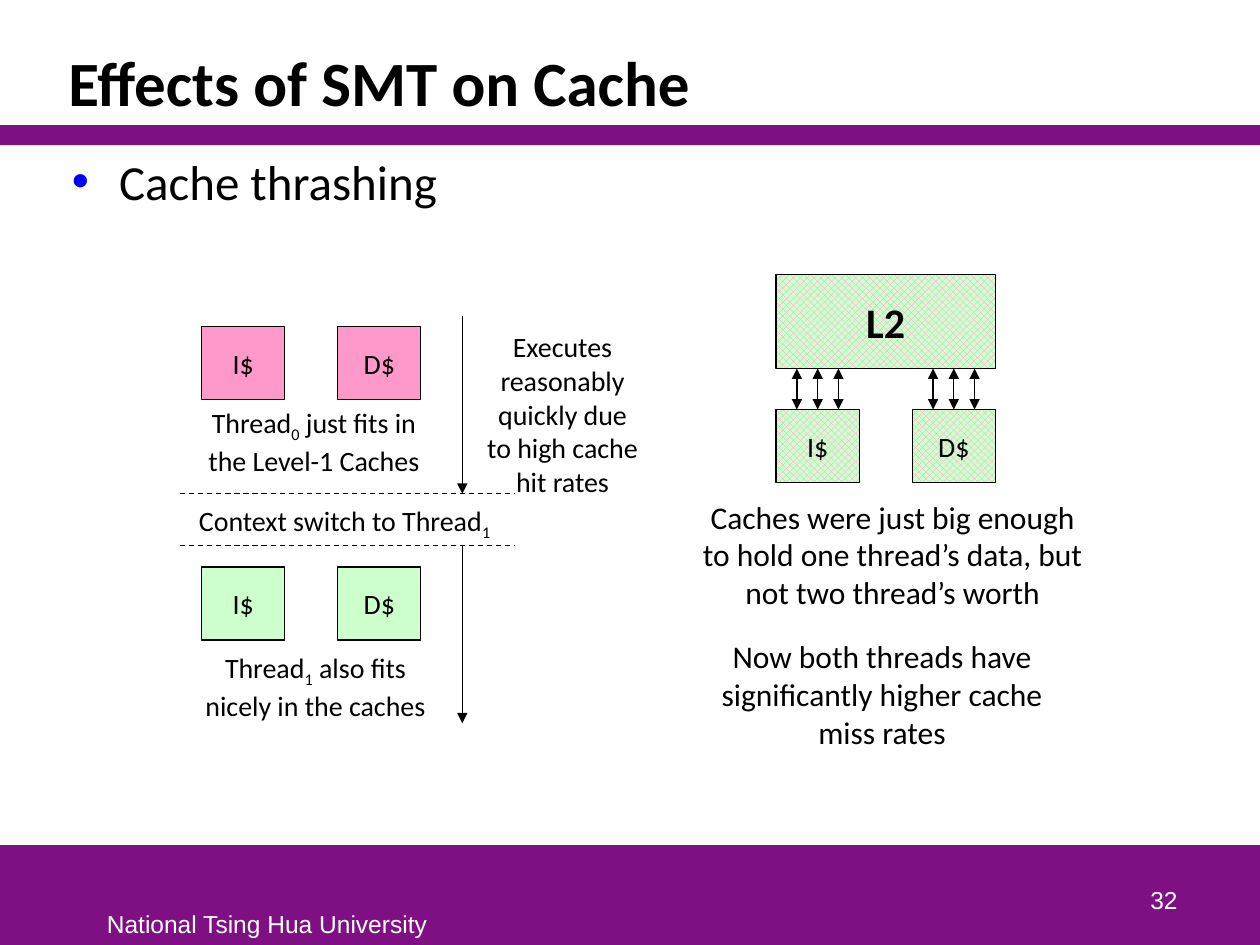
from lxml import etree
from pptx import Presentation
from pptx.dml.color import RGBColor
from pptx.enum.dml import MSO_LINE, MSO_PATTERN
from pptx.enum.shapes import MSO_CONNECTOR, MSO_SHAPE
from pptx.enum.text import MSO_ANCHOR, MSO_AUTO_SIZE, PP_ALIGN
from pptx.oxml.ns import qn
from pptx.util import Pt

RECTANGLE = MSO_SHAPE.RECTANGLE
STRAIGHT = MSO_CONNECTOR.STRAIGHT
DASH = MSO_LINE.DASH
CHECKER = MSO_PATTERN.LARGE_CHECKER_BOARD
TOP, MIDDLE, BOTTOM = MSO_ANCHOR.TOP, MSO_ANCHOR.MIDDLE, MSO_ANCHOR.BOTTOM
LEFT, CENTER, RIGHT = PP_ALIGN.LEFT, PP_ALIGN.CENTER, PP_ALIGN.RIGHT
FIT_SHAPE = MSO_AUTO_SIZE.SHAPE_TO_FIT_TEXT

PURPLE = RGBColor(0x7F, 0x10, 0x84)
PINK = RGBColor(0xFF, 0x99, 0xCC)
GREEN = RGBColor(0xCC, 0xFF, 0xCC)
BLACK = RGBColor(0, 0, 0)
WHITE = RGBColor(0xFF, 0xFF, 0xFF)
BULLET_BLUE = "0000FF"

LABEL = {"name": "Calibri", "size": Pt(16)}
REMARK = {"name": "Calibri", "size": Pt(18)}
HEADING = {"name": "Calibri", "size": Pt(36), "bold": True}
BODY = {"name": "Calibri", "size": Pt(28)}
L2_FONT = {"name": "Calibri", "size": Pt(24), "bold": True}
FOOTER = {"name": "Arial", "size": Pt(14)}

CACHE_W, CACHE_H = 47.5, 41.8
CACHE_PITCH = 77.8
L1_LEFT, SHARED_LEFT = 115.2, 443.5
L2_TOP, L2_H = 156.9, 53.7
SHARED_TOP = 234
TIME_X = 264.2
SWITCH_START, SWITCH_END = 282.2, 311.8
RUN_LENGTH = 101.5


def write(shape, lines, font, color=BLACK, align=CENTER, anchor=TOP):
    """Write one paragraph per line; text between underscores is subscript."""
    frame = shape.text_frame
    frame.vertical_anchor = anchor
    for index, line in enumerate(lines):
        paragraph = frame.paragraphs[0] if index == 0 else frame.add_paragraph()
        paragraph.alignment = align
        for part, text in enumerate(line.split("_")):
            if not text:
                continue
            run = paragraph.add_run()
            run.text = text
            for key, value in font.items():
                setattr(run.font, key, value)
            run.font.color.rgb = color
            if part % 2:
                run._r.get_or_add_rPr().set("baseline", "-25000")
    return frame


def add_text(slide, box, lines, font, wrap=False, **style):
    shape = slide.shapes.add_textbox(*map(Pt, box))
    frame = write(shape, lines, font, **style)
    frame.word_wrap = wrap
    if not wrap:
        frame.auto_size = FIT_SHAPE
    return frame


def add_band(slide, top, height):
    band = slide.shapes.add_shape(RECTANGLE, 0, Pt(top), Pt(720), Pt(height))
    band.shadow.inherit = False
    band.fill.solid()
    band.fill.fore_color.rgb = PURPLE
    band.line.fill.background()


def add_cache(slide, box, name, color=None, font=LABEL):
    """Add a cache block; without a colour it is checkered for both threads."""
    cache = slide.shapes.add_shape(RECTANGLE, *map(Pt, box))
    cache.shadow.inherit = False
    if color is None:
        cache.fill.patterned()
        cache.fill.pattern = CHECKER
        cache.fill.fore_color.rgb = PINK
        cache.fill.back_color.rgb = GREEN
    else:
        cache.fill.solid()
        cache.fill.fore_color.rgb = color
    cache.line.color.rgb = BLACK
    cache.line.width = Pt(0.75)
    write(cache, [name], font, anchor=MIDDLE).word_wrap = False
    return cache


def add_cache_pair(slide, left, top, color=None):
    return [
        add_cache(slide, (left + i * CACHE_PITCH, top, CACHE_W, CACHE_H), name, color)
        for i, name in enumerate(("I$", "D$"))
    ]


def add_line(slide, start, end, arrow_ends=(), dash=None):
    line = slide.shapes.add_connector(STRAIGHT, *map(Pt, (*start, *end)))
    line.line.color.rgb = BLACK
    line.line.width = Pt(0.75)
    if dash:
        line.line.dash_style = dash
    outline = line.line._get_or_add_ln()
    for arrow_end in arrow_ends:
        etree.SubElement(outline, qn(f"a:{arrow_end}"), type="triangle")
    etree.SubElement(line._element.spPr, qn("a:effectLst"))
    return line


def add_bullet(paragraph):
    properties = paragraph._p.get_or_add_pPr()
    properties.set("marL", str(Pt(27)))
    properties.set("indent", str(Pt(-27)))
    color = etree.SubElement(properties, qn("a:buClr"))
    etree.SubElement(color, qn("a:srgbClr"), val=BULLET_BLUE)
    etree.SubElement(properties, qn("a:buFont"), typeface="Arial")
    etree.SubElement(properties, qn("a:buChar"), char="•")


def add_frame(slide):
    """Add the bands, title, bullet and footer."""
    add_band(slide, 483, 57)
    add_band(slide, 71.5, 11.5)
    add_text(slide, (54, 516, 199, 24), ["National Tsing Hua University"], FOOTER,
             color=WHITE, align=LEFT)
    title = add_text(slide, (32, 18, 646, 53.5), ["Effects of SMT on Cache"], HEADING,
                     wrap=True, align=LEFT, anchor=BOTTOM)
    title.paragraphs[0].line_spacing = 0.85
    body = add_text(slide, (34, 83, 644, 391), ["Cache thrashing"], BODY,
                    wrap=True, align=LEFT)
    add_bullet(body.paragraphs[0])
    add_text(slide, (530, 490, 150, 36), ["32"], FOOTER,
             wrap=True, color=WHITE, align=RIGHT, anchor=BOTTOM)


def add_time_sharing(slide):
    """Show two threads taking turns in the level-1 caches."""
    add_cache_pair(slide, L1_LEFT, 186.5, PINK)
    add_text(slide, (110.9, 228.2, 137, 46),
             ["Thread_0_ just fits in", "the Level-1 Caches"], LABEL)
    add_text(slide, (270.7, 185, 101.5, 104.4),
             ["Executes", "reasonably", "quickly due", "to high cache", "hit rates"], LABEL)
    add_text(slide, (105.1, 284.4, 183.6, 26.6), ["Context switch to Thread_1_"], LABEL)
    for y in (SWITCH_START, SWITCH_END):
        add_line(slide, (103, y), (294.5, y), dash=DASH)
    add_cache_pair(slide, L1_LEFT, 324, GREEN)
    add_text(slide, (109.4, 367.9, 141.8, 46),
             ["Thread_1_ also fits", "nicely in the caches"], LABEL)
    for y in (SWITCH_START - RUN_LENGTH, SWITCH_END):
        add_line(slide, (TIME_X, y), (TIME_X, y + RUN_LENGTH), ["tailEnd"])


def add_shared_caches(slide):
    """Show both threads sharing the caches at the same time."""
    caches = add_cache_pair(slide, SHARED_LEFT, SHARED_TOP)
    add_cache(slide, (SHARED_LEFT, L2_TOP, CACHE_PITCH + CACHE_W, L2_H), "L2", font=L2_FONT)
    for i, cache in enumerate(caches):
        for quarter in (1, 2, 3):
            x = SHARED_LEFT + i * CACHE_PITCH + quarter * CACHE_W / 4
            arrow = add_line(slide, (x, SHARED_TOP), (x, L2_TOP + L2_H),
                             ["headEnd", "tailEnd"])
            if quarter == 2:
                arrow.begin_connect(cache, 0)
    add_text(slide, (393.1, 280.8, 234, 72.7),
             ["Caches were just big enough", "to hold one thread’s data, but",
              "not two thread’s worth"], REMARK)
    add_text(slide, (403.9, 360.7, 200.2, 72.7),
             ["Now both threads have", "significantly higher cache", "miss rates"], REMARK)


def main():
    presentation = Presentation()
    presentation.slide_width, presentation.slide_height = Pt(720), Pt(540)
    slide = presentation.slides.add_slide(presentation.slide_layouts[6])
    add_frame(slide)
    add_time_sharing(slide)
    add_shared_caches(slide)
    presentation.save("out.pptx")


if __name__ == "__main__":
    main()
